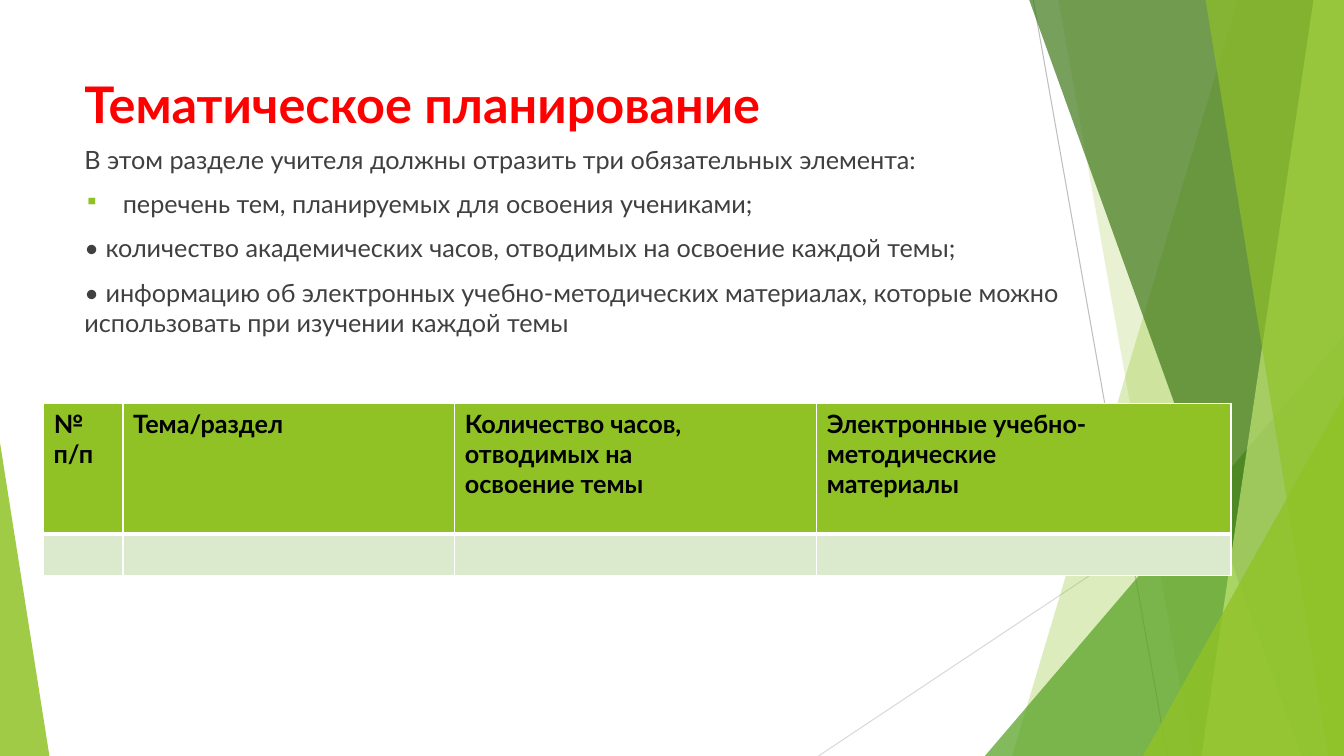
"""Build the lesson planning slide: green facets, three points and a table."""
import dataclasses

import pptx
import pptx.dml.color
import pptx.enum.shapes
import pptx.enum.text
import pptx.oxml
import pptx.oxml.ns
import pptx.util

WIDE, HIGH = pptx.util.Inches(13.33), pptx.util.Inches(7.5)
FONT = "Lato"
GREEN, WHITE, BLACK, RED, GREY = "90C226", "FFFFFF", "000000", "FF0000", "404040"
QN = pptx.oxml.ns.qn


@dataclasses.dataclass(frozen=True)
class Line:
    """A thin line, with ends in percent of the slide."""
    start: tuple[float, float]
    end: tuple[float, float]
    color: str


@dataclasses.dataclass(frozen=True)
class Band:
    """A full-height facet that reaches the right edge of the slide."""
    top: float
    base: float
    color: str
    alpha: int


@dataclasses.dataclass(frozen=True)
class Peak:
    """A triangle that stands on the bottom edge of the slide."""
    left: float
    top: float
    width: float
    tip: int
    color: str
    alpha: int


@dataclasses.dataclass(frozen=True)
class Point:
    """A paragraph of the body text."""
    text: str
    mark: str = ""


LINES = [
    Line((76.88, 0), (86.85, 100), "BFBFBF"),
    Line((100, 53.73), (60.9, 100), "D9D9D9"),
]
FACETS = [
    Band(92.1, 75.3, GREEN, 30),
    Band(78.75, 88.73, GREEN, 20),
    Peak(73.28, 44.4, 26.72, 1, "54A021", 72),
    Band(76.58, 96.83, "3F7819", 70),
    Band(97.73, 89.4, "C0E474", 70),
    Band(89.7, 98.85, GREEN, 65),
    Peak(85.05, 52.4, 14.95, 1, GREEN, 80),
    Peak(0, 58.53, 3.68, 0, GREEN, 85),
]
POINTS = [
    Point("В этом разделе учителя должны отразить три обязательных элемента:"),
    Point("перечень тем, планируемых для освоения учениками;", "▪"),
    Point("• количество академических часов, отводимых на освоение каждой темы;"),
    Point("• информацию об электронных учебно-методических материалах, "
          "которые можно использовать при изучении каждой темы"),
]
HEADS = [
    "№\nп/п",
    "Тема/раздел",
    "Количество часов,\nотводимых на\nосвоение темы",
    "Электронные учебно- методические\nматериалы",
]
COLS = [5.93, 24.68, 26.93, 30.83]
ROWS = [17.33, 5.47]


def across(share: float) -> int:
    """Turn percent of the slide width into a length."""
    return round(WIDE * share / 100)


def down(share: float) -> int:
    """Turn percent of the slide height into a length."""
    return round(HIGH * share / 100)


def tint(code: str) -> pptx.dml.color.RGBColor:
    """Turn a hex string into a colour."""
    return pptx.dml.color.RGBColor.from_string(code)


def add_tag(parent, name: str, **attrs):
    """Append a drawing element with the given attributes."""
    child = pptx.oxml.parse_xml(f"<a:{name} {pptx.oxml.ns.nsdecls('a')}/>")
    for key, value in attrs.items():
        child.set(key, str(value))
    parent.append(child)
    return child


def draw_line(slide, line: Line) -> None:
    """Draw a thin line without a shadow."""
    link = slide.shapes.add_connector(
        pptx.enum.shapes.MSO_CONNECTOR.STRAIGHT,
        across(line.start[0]), down(line.start[1]),
        across(line.end[0]), down(line.end[1]))
    link.line.color.rgb = tint(line.color)
    link.line.width = pptx.util.Pt(0.75)
    add_tag(link._element.spPr, "effectLst")


def draw_facet(slide, facet: Band | Peak) -> None:
    """Draw a see-through band or peak."""
    if isinstance(facet, Band):
        pen = slide.shapes.build_freeform(across(facet.top), 0)
        pen.add_line_segments([(WIDE, 0), (WIDE, HIGH), (across(facet.base), HIGH)])
        shape = pen.convert_to_shape()
    else:
        shape = slide.shapes.add_shape(
            pptx.enum.shapes.MSO_SHAPE.ISOSCELES_TRIANGLE,
            across(facet.left), down(facet.top),
            across(facet.width), down(100 - facet.top))
        shape.adjustments[0] = facet.tip
    shape.shadow.inherit = False
    shape.line.fill.background()
    shape.fill.solid()
    shape.fill.fore_color.rgb = tint(facet.color)
    paint = shape._element.spPr.find(f"{QN('a:solidFill')}/{QN('a:srgbClr')}")
    add_tag(paint, "alpha", val=facet.alpha * 1000)


def set_font(para, size: int, color: str, bold: bool = False) -> None:
    """Set the font of a whole paragraph."""
    para.font.name = FONT
    para.font.size = pptx.util.Pt(size)
    para.font.bold = bold
    para.font.color.rgb = tint(color)


def add_frame(slide, left: float, top: float, width: float, height: float):
    """Add a wrapping text box and return its frame."""
    box = slide.shapes.add_textbox(across(left), down(top), across(width), down(height))
    box.text_frame.word_wrap = True
    return box.text_frame


def draw_title(slide) -> None:
    """Write the slide title."""
    frame = add_frame(slide, 5.55, 8.93, 70.5, 9.6)
    frame.vertical_anchor = pptx.enum.text.MSO_ANCHOR.MIDDLE
    frame.text = "Тематическое планирование"
    set_font(frame.paragraphs[0], 36, RED, True)


def draw_points(slide) -> None:
    """Write the body paragraphs."""
    frame = add_frame(slide, 5.55, 18.4, 86.1, 69.6)
    frame.margin_right = pptx.util.Inches(0.2)
    frame.text = "\n".join(point.text for point in POINTS)
    for para, point in zip(frame.paragraphs, POINTS):
        para.space_before = pptx.util.Pt(10)
        if point.mark:
            props = para._p.get_or_add_pPr()
            dent = pptx.util.Inches(0.38)
            props.set("marL", str(dent))
            props.set("indent", str(-dent))
            add_tag(add_tag(props, "buClr"), "srgbClr", val=GREEN)
            add_tag(props, "buSzPct", val=80000)
            add_tag(props, "buChar", char=point.mark)
        set_font(para, 18, GREY)


def style_cell(cell, text: str, fill: str, edges: dict[str, int]) -> None:
    """Fill a cell with text, white borders and a colour."""
    cell.text = text
    for para in cell.text_frame.paragraphs:
        set_font(para, 18, BLACK, True)
    props = cell._tc.get_or_add_tcPr()
    for side, width in edges.items():
        edge = add_tag(props, f"ln{side}", w=pptx.util.Pt(width))
        add_tag(add_tag(edge, "solidFill"), "srgbClr", val=WHITE)
    cell.fill.solid()
    cell.fill.fore_color.rgb = tint(fill)


def draw_table(slide) -> None:
    """Draw the planning table with one empty row."""
    table = slide.shapes.add_table(
        len(ROWS), len(COLS), across(3.23), down(53.33),
        across(sum(COLS)), down(sum(ROWS))).table
    for col, share in zip(table.columns, COLS):
        col.width = across(share)
    for row, share in zip(table.rows, ROWS):
        row.height = down(share)
    for spot, head in enumerate(HEADS):
        style_cell(table.cell(0, spot), head, GREEN, {"L": 1, "R": 1, "T": 1, "B": 3})
        style_cell(table.cell(1, spot), "", "DBE9CD", {"L": 1, "R": 1, "T": 3, "B": 1})


def main() -> None:
    """Build and save the slide."""
    deck = pptx.Presentation()
    deck.slide_width, deck.slide_height = WIDE, HIGH
    slide = deck.slides.add_slide(deck.slide_layouts[6])
    for line in LINES:
        draw_line(slide, line)
    for facet in FACETS:
        draw_facet(slide, facet)
    draw_title(slide)
    draw_points(slide)
    draw_table(slide)
    deck.save("out.pptx")


if __name__ == "__main__":
    main()
